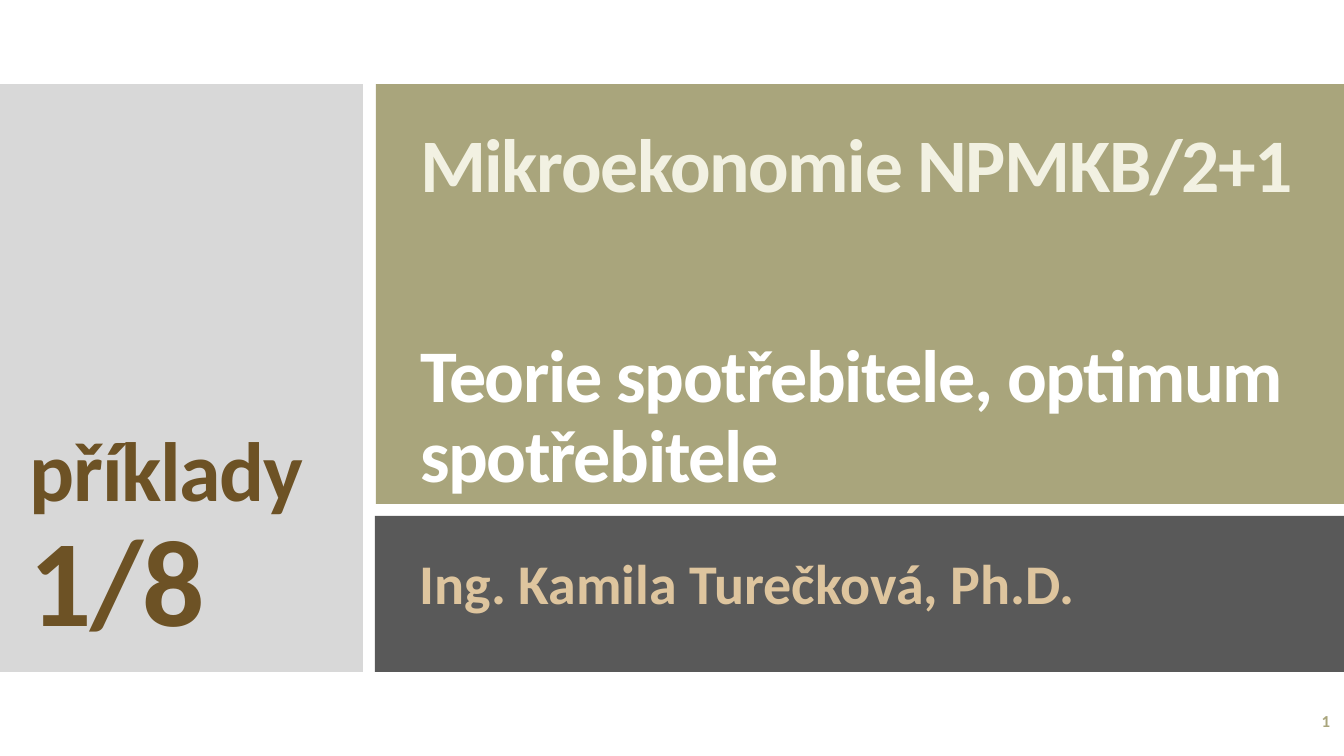
from pptx import Presentation
from pptx.dml.color import RGBColor
from pptx.enum.shapes import MSO_SHAPE
from pptx.enum.text import MSO_ANCHOR as ANCHOR, MSO_AUTO_SIZE as AUTO, PP_ALIGN as ALIGN
from pptx.util import Emu, Pt

COLORS = {
    "olive": "A9A57C", "light": "D8D8D8", "dark": "595959", "white": "FFFFFF",
    "cream": "F2F1E2", "sand": "DEC59E", "brown": "6D5225",
}
FONT = "Calibri"
EMU_PER_PX = 914400 / 100.8


def px(n):
    return Emu(round(n * EMU_PER_PX))


def rgb(name):
    return RGBColor.from_string(COLORS[name])


class Deck:
    def __init__(self, width, height):
        self.prs = Presentation()
        self.prs.slide_width, self.prs.slide_height = px(width), px(height)
        self.s = None

    def add_slide(self):
        self.s = self.prs.slides.add_slide(self.prs.slide_layouts[5])

    def panel(self, x, y, w, h, color):
        sp = self.s.shapes.add_shape(MSO_SHAPE.RECTANGLE, px(x), px(y), px(w), px(h))
        sp.shadow.inherit = False
        sp.fill.solid()
        sp.fill.fore_color.rgb = rgb(color)
        sp.line.fill.background()

    def set_lines(self, sp, lines, anchor, align=ALIGN.LEFT, spacing=0.9, tracking=0, gap=0):
        """Fill a shape with (text, size, color) lines; gap is in points."""
        tf = sp.text_frame
        tf.text = "\n".join(text for text, _, _ in lines)
        tf.word_wrap, tf.auto_size, tf.vertical_anchor = True, AUTO.NONE, anchor
        for i, (p, (_, size, color)) in enumerate(zip(tf.paragraphs, lines)):
            p.alignment, p.line_spacing = align, spacing
            p.space_before = Pt(gap if i else 0)
            r = p.runs[0]
            r.font.name, r.font.size, r.font.bold = FONT, Pt(size), True
            r.font.color.rgb = rgb(color)
            if tracking:
                r._r.get_or_add_rPr().set("spc", str(tracking * 100))

    def title(self, x, y, w, h, lines, **style):
        sp = self.s.shapes.title
        sp.left, sp.top, sp.width, sp.height = px(x), px(y), px(w), px(h)
        self.s.shapes._spTree.append(sp._element)  # bring in front of the panels
        self.set_lines(sp, lines, **style)

    def text(self, x, y, w, h, lines, **style):
        sp = self.s.shapes.add_textbox(px(x), px(y), px(w), px(h))
        self.set_lines(sp, lines, **style)


def main():
    deck = Deck(1344, 756)
    deck.add_slide()

    # Background panels
    deck.panel(0, 84, 363, 588, "light")
    deck.panel(376, 84, 968, 420, "olive")
    deck.panel(375, 516, 969, 156, "dark")

    # Course and topic
    deck.title(410, 143, 913, 361, [
        ("Mikroekonomie NPMKB/2+1", 54, "cream"),
        ("Teorie spotřebitele, optimum spotřebitele", 53, "white"),
    ], anchor=ANCHOR.BOTTOM, tracking=-1, gap=93)

    # Author
    deck.text(410, 551, 792, 85, [("Ing. Kamila Turečková, Ph.D.", 40, "sand")],
              anchor=ANCHOR.TOP)

    # Exercise number
    deck.text(20, 96, 323, 562, [("příklady", 60, "brown"), ("1/8", 88, "brown")],
              anchor=ANCHOR.BOTTOM, tracking=-1)

    # Slide number
    deck.text(1172, 701, 168, 40, [("1", 12, "olive")],
              anchor=ANCHOR.MIDDLE, align=ALIGN.RIGHT, spacing=1.0)

    deck.prs.save("out.pptx")


if __name__ == "__main__":
    main()
